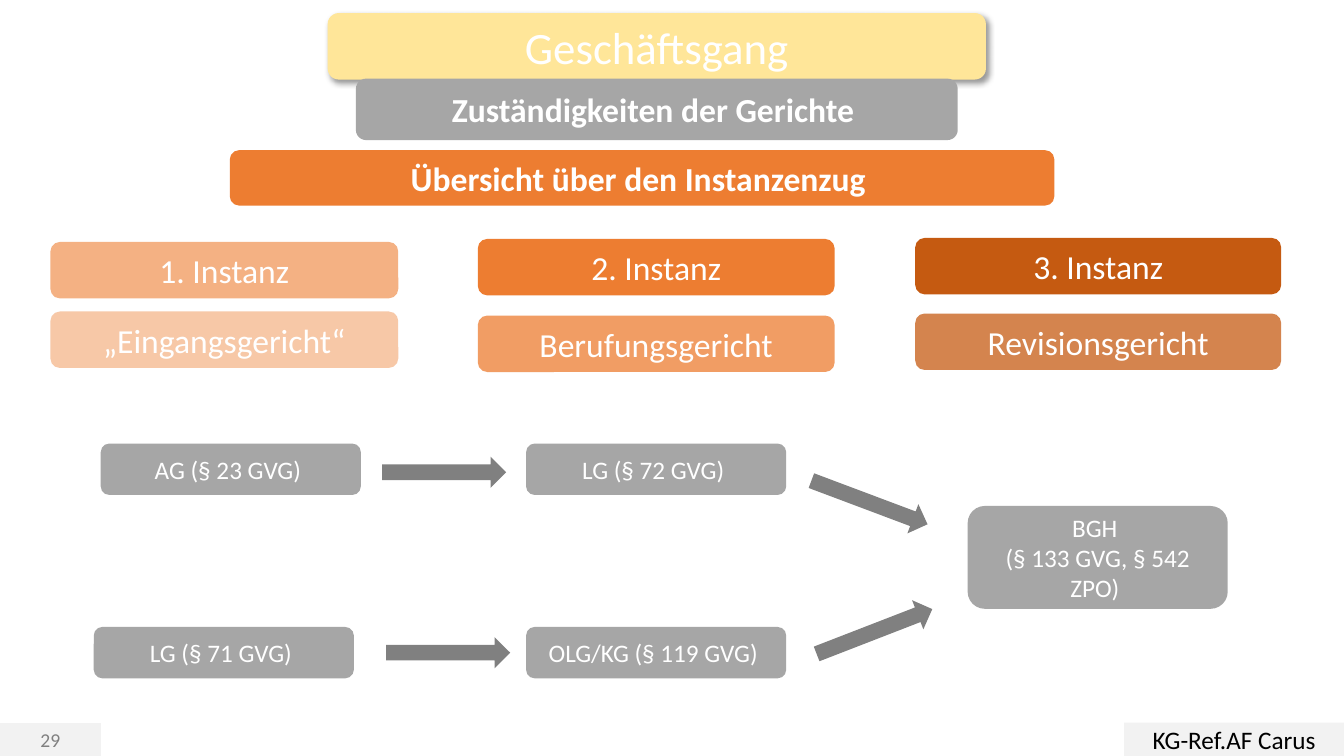
from dataclasses import dataclass

from lxml.etree import SubElement
from pptx import Presentation
from pptx.dml.color import RGBColor
from pptx.enum.shapes import MSO_SHAPE as Shape
from pptx.enum.text import MSO_ANCHOR as Anchor, PP_ALIGN as Align
from pptx.oxml.ns import qn
from pptx.util import Inches, Pt

SLIDE_W, SLIDE_H = Inches(13.33), Inches(7.5)
COL, ROW = SLIDE_W / 100, SLIDE_H / 100  # grid of 100 columns and 100 rows


@dataclass(frozen=True)
class Theme:
    font: str = "Calibri"
    white: str = "FFFFFF"
    black: str = "000000"
    yellow: str = "FFE699"
    light_orange: str = "F4B183"
    orange: str = "ED7D31"
    dark_orange: str = "C55A11"
    gray: str = "A6A6A6"
    dark_gray: str = "808080"
    pale_gray: str = "F2F2F2"
    title: int = 32
    heading: int = 24
    body: int = 18
    small: int = 14


@dataclass(frozen=True)
class Box:
    """Area in grid columns and rows."""
    x: float
    y: float
    w: float
    h: float

    def inner(self, dx, dy, w, h):
        return Box(self.x + dx, self.y + dy, w, h)


THEME = Theme()


def add_block(slide, box, fill, kind=Shape.ROUNDED_RECTANGLE, alpha=100):
    sp = slide.shapes.add_shape(kind, round(box.x * COL), round(box.y * ROW),
                                round(box.w * COL), round(box.h * ROW))
    sp.shadow.inherit = False
    sp.fill.solid()
    sp.fill.fore_color.rgb = RGBColor.from_string(fill)
    sp.line.fill.background()
    if alpha < 100:
        color = sp.element.spPr.find(qn("a:solidFill"))[0]
        SubElement(color, qn("a:alpha"), val=str(alpha * 1000))
    return sp


def write(sp, text, size, color=THEME.white, bold=False):
    tf = sp.text_frame
    tf.word_wrap = True
    tf.vertical_anchor = Anchor.MIDDLE
    tf.text = text
    for p in tf.paragraphs:
        p.alignment = Align.CENTER
        p.font.name = THEME.font
        p.font.size = Pt(size)
        p.font.bold = bold
        p.font.color.rgb = RGBColor.from_string(color)


def add_drop_shadow(sp):
    effects = sp.element.spPr.find(qn("a:effectLst"))
    shadow = SubElement(effects, qn("a:outerShdw"), blurRad=str(Pt(4)),
                        dist=str(Pt(3)), dir=str(45 * 60000),
                        algn="tl", rotWithShape="0")
    color = SubElement(shadow, qn("a:srgbClr"), val=THEME.black)
    SubElement(color, qn("a:alpha"), val="40000")


def add_header(slide, box):
    overview = add_block(slide, box.inner(0, 18.14, box.w, 7.33), THEME.orange)
    write(overview, "Übersicht über den Instanzenzug ", THEME.heading, bold=True)
    title = add_block(slide, box.inner(7.28, 0, 48.98, 8.8), THEME.yellow)
    add_drop_shadow(title)
    write(title, "Geschäftsgang", THEME.title)
    topic = add_block(slide, box.inner(9.38, 8.67, 44.78, 8.13), THEME.gray)
    write(topic, "Zuständigkeiten der Gerichte ", THEME.heading, bold=True)


def add_instances(slide, box):
    columns = (
        # left, width, tops of both blocks, fill, alpha of the lower, texts
        (0, 25.88, (0.53, 9.73), THEME.light_orange, 70,
         ("1. Instanz", "„Eingangsgericht“")),
        (31.8, 26.55, (0.13, 10.27), THEME.orange, 75,
         ("2. Instanz", "Berufungsgericht")),
        (64.35, 27.23, (0, 10), THEME.dark_orange, 74,
         ("3. Instanz", "Revisionsgericht")),
    )
    for left, width, tops, fill, lower_alpha, texts in columns:
        for top, alpha, text in zip(tops, (100, lower_alpha), texts):
            sp = add_block(slide, box.inner(left, top, width, 7.47), fill, alpha=alpha)
            write(sp, text, THEME.heading)


def add_court_flow(slide, box):
    court_w, court_h = 19.35, 6.8
    lower = box.h - court_h
    courts = (
        (0.52, 0, court_h, "AG (§ 23 GVG) "),
        (0, lower, court_h, "LG (§ 71 GVG) "),
        (32.17, 0, court_h, "LG (§ 72 GVG) "),
        (32.17, lower, court_h, "OLG/KG (§ 119 GVG) "),
        (65.02, 8.26, 2 * court_h, "BGH \n(§ 133 GVG, § 542 ZPO) "),
    )
    for left, top, height, text in courts:
        sp = add_block(slide, box.inner(left, top, court_w, height), THEME.gray)
        write(sp, text, THEME.body)

    arrows = ((21.45, 1.73, 0), (53.1, 5.73, 20.6),
              (53.47, 22.8, -21.2), (21.75, 25.6, 0))
    for left, top, angle in arrows:
        arrow = add_block(slide, box.inner(left, top, 9.23, 4.13),
                          THEME.dark_gray, Shape.RIGHT_ARROW)
        arrow.rotation = angle


def add_footer(slide, box):
    number = add_block(slide, box.inner(0, 0.13, 7.5, box.h - 0.13),
                       THEME.pale_gray, Shape.RECTANGLE)
    number.line.color.rgb = RGBColor.from_string(THEME.pale_gray)
    number.line.width = Pt(1)
    write(number, "29", THEME.small, THEME.dark_gray)
    course = add_block(slide, box.inner(box.w - 16.35, 0, 16.35, box.h),
                       THEME.pale_gray, Shape.RECTANGLE)
    write(course, "KG-Ref.AF Carus", THEME.body, THEME.black)


def main():
    prs = Presentation()
    prs.slide_width, prs.slide_height = SLIDE_W, SLIDE_H
    slide = prs.slides.add_slide(prs.slide_layouts[6])
    add_header(slide, Box(17.1, 1.73, 61.35, 25.47))
    add_instances(slide, Box(3.75, 31.47, 91.58, 17.74))
    add_court_flow(slide, Box(6.98, 58.67, 84.37, 31.06))
    add_footer(slide, Box(0, 95.6, 100, 4.4))
    prs.save("out.pptx")


if __name__ == "__main__":
    main()
